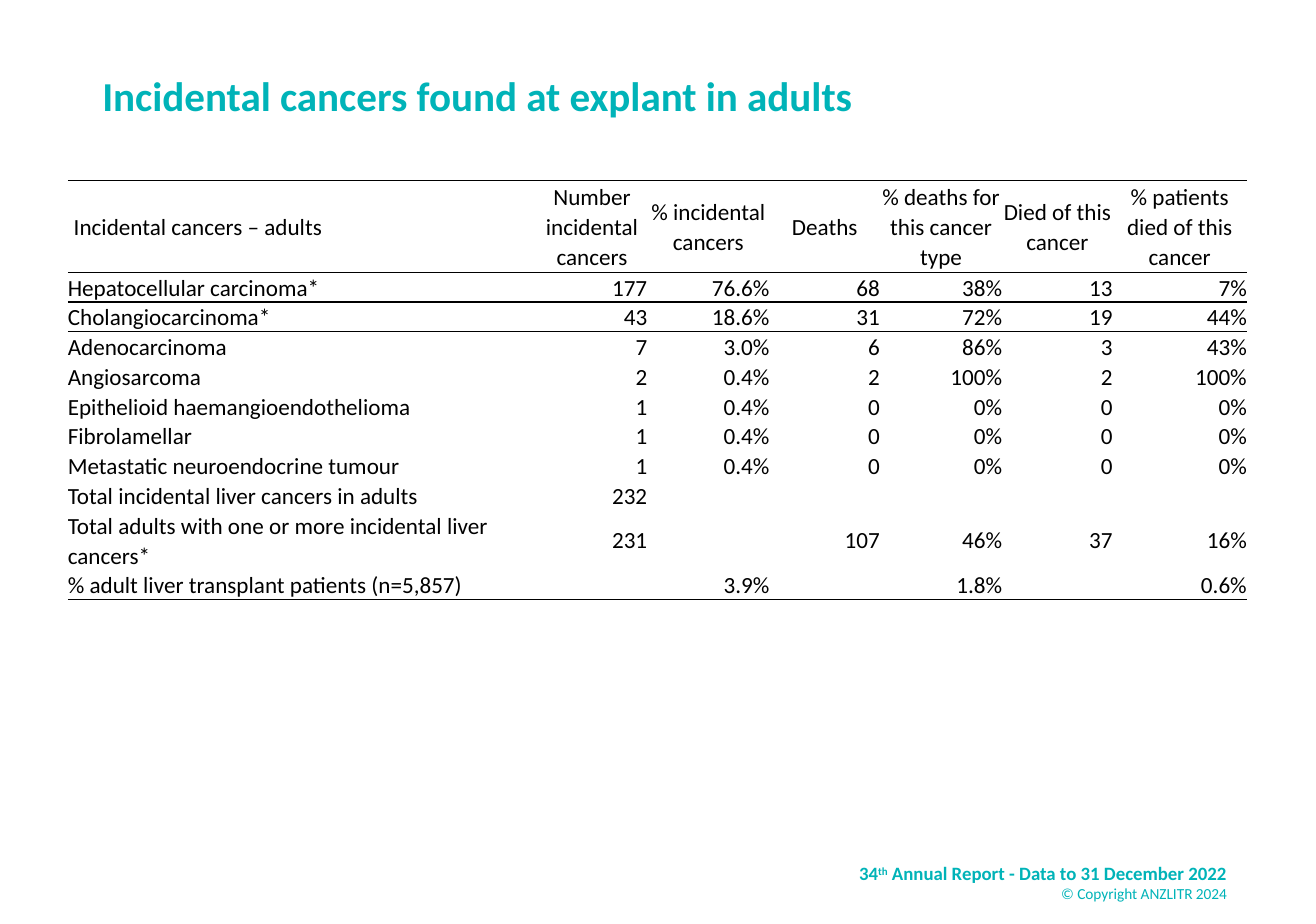
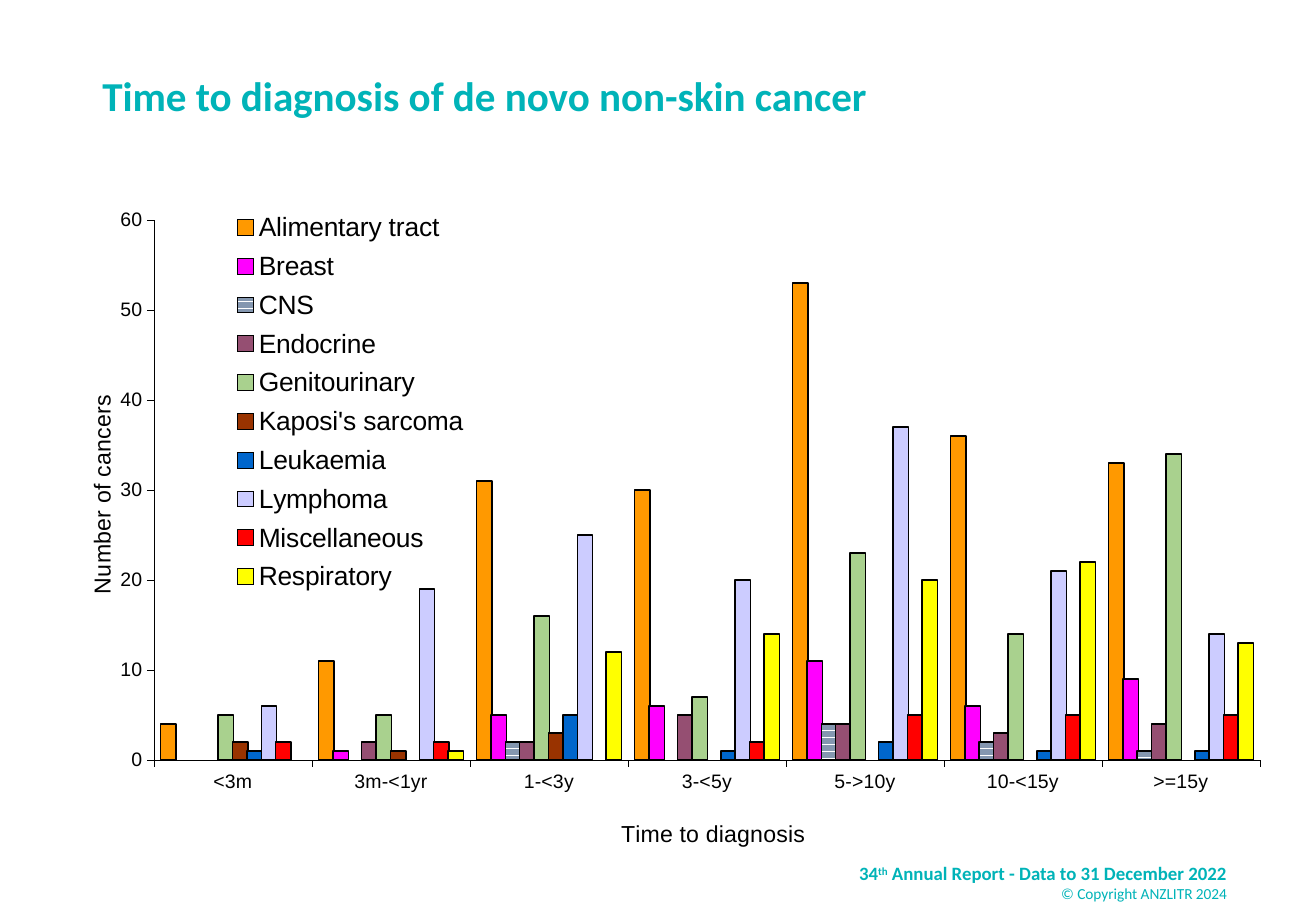
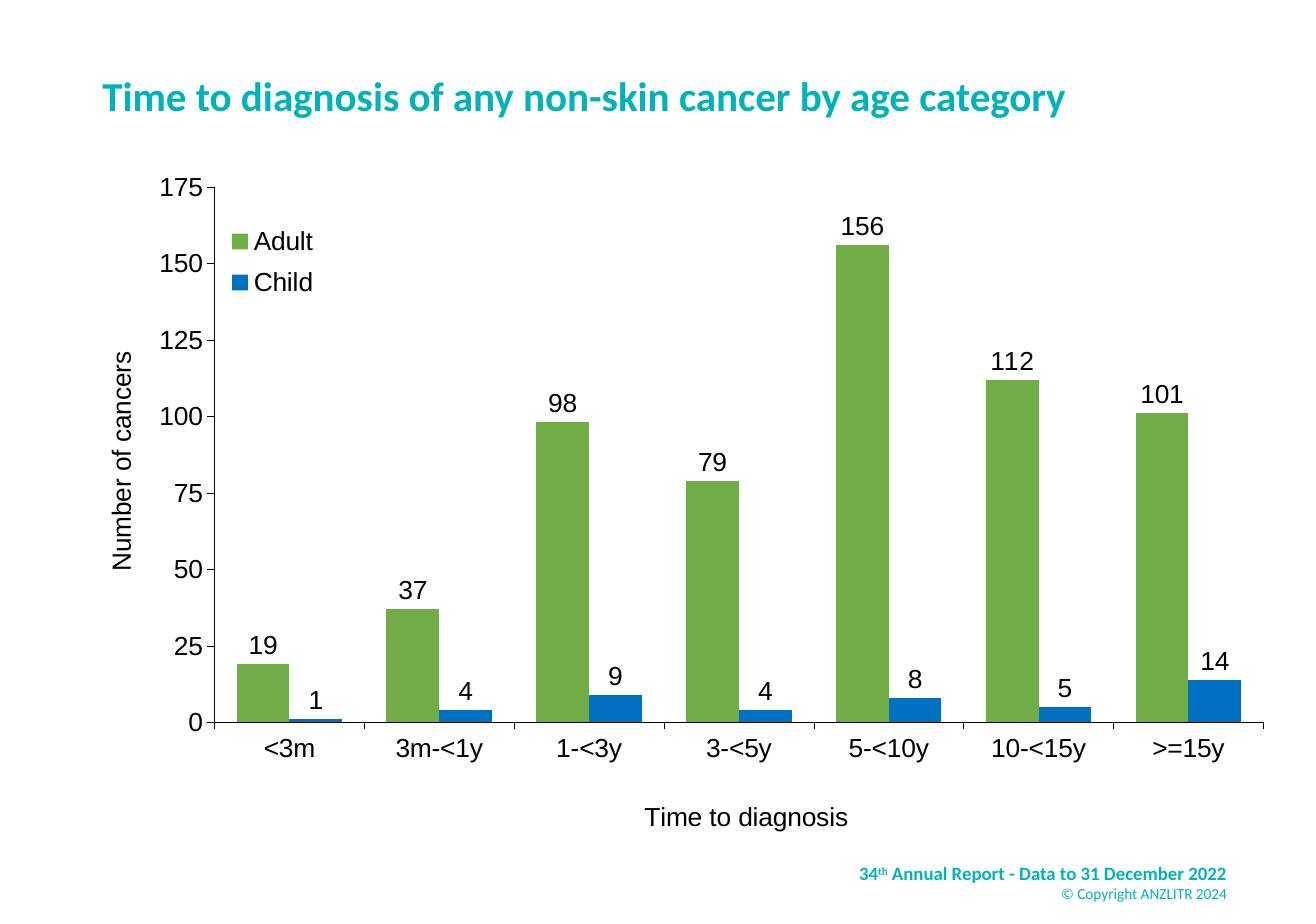
"""Build three slides on cancers in liver transplant patients."""
import pptx
import pptx.chart.data
import pptx.dml.color
import pptx.enum.chart
import pptx.enum.dml
import pptx.enum.text
import pptx.util
from lxml import etree
from pptx.oxml.ns import qn

SLIDE_WIDTH = pptx.util.Inches(11.07)
SLIDE_HEIGHT = pptx.util.Inches(7.77)
COLORS = {
    "brand": "00B3B8", "ink": "000000", "paper": "FFFFFF",
    "orange": "FF9900", "magenta": "FF00FF", "slate": "8497B0",
    "plum": "954F72", "sage": "A9D18E", "brown": "993300",
    "blue": "0066CC", "lavender": "CCCCFF", "red": "FF0000",
    "yellow": "FFFF00", "green": "70AD47", "azure": "0070C0",
}
TITLE_FORMAT = {"name": "Calibri", "size": pptx.util.Pt(24.9), "bold": True}
REPORT_FORMAT = {"name": "Calibri", "size": pptx.util.Pt(11.4), "bold": True}
COPYRIGHT_FORMAT = {"name": "Calibri", "size": pptx.util.Pt(9.3), "bold": False}
CELL_FORMAT = {"name": "Calibri", "size": pptx.util.Pt(14), "bold": False}
NO_STYLE = "{2D5ABB26-0587-4C30-8999-92F81FD0307C}"
ALIGN = pptx.enum.text.PP_ALIGN
MIDDLE = pptx.enum.text.MSO_ANCHOR.MIDDLE
LEGEND = pptx.enum.chart.XL_LEGEND_POSITION

COLUMN_WEIGHTS = [3.95, 0.93, 1.03, 0.93, 1.03, 0.93, 1.13]
ROW_WEIGHTS = [0.77] + [0.25] * 10
CANCER_ROWS = [
    ["Incidental cancers – adults", "Number incidental cancers", "% incidental cancers", "Deaths",
     "% deaths for this cancer type", "Died of this cancer", "% patients died of this cancer"],
    ["Hepatocellular carcinoma*", "177", "76.6%", "68", "38%", "13", "7%"],
    ["Cholangiocarcinoma*", "43", "18.6%", "31", "72%", "19", "44%"],
    ["Adenocarcinoma", "7", "3.0%", "6", "86%", "3", "43%"],
    ["Angiosarcoma", "2", "0.4%", "2", "100%", "2", "100%"],
    ["Epithelioid haemangioendothelioma", "1", "0.4%", "0", "0%", "0", "0%"],
    ["Fibrolamellar", "1", "0.4%", "0", "0%", "0", "0%"],
    ["Metastatic neuroendocrine tumour", "1", "0.4%", "0", "0%", "0", "0%"],
    ["Total incidental liver cancers in adults", "232", "", "", "", "", ""],
    ["Total adults with one or more incidental liver cancers*", "231", "", "107", "46%", "37", "16%"],
    ["% adult liver transplant patients (n=5,857)", "", "3.9%", "", "1.8%", "", "0.6%"],
]
ROW_BORDERS = {0: ["lnT", "lnB"], 1: ["lnT", "lnB"], 2: ["lnT"], 10: ["lnB"]}

DE_NOVO_CHART = {
    "area": (4.07, 21.24, 92.05, 71.94),
    "categories": ["<3m", "3m-<1yr", "1-<3y", "3-<5y", "5->10y", "10-<15y", ">=15y"],
    "series": [
        ("Alimentary tract", "orange", [4, 11, 31, 30, 53, 36, 33]),
        ("Breast", "magenta", [None, 1, 5, 6, 11, 6, 9]),
        ("CNS", "slate", [None, None, 2, None, 4, 2, 1]),
        ("Endocrine", "plum", [None, 2, 2, 5, 4, 3, 4]),
        ("Genitourinary", "sage", [5, 5, 16, 7, 23, 14, 34]),
        ("Kaposi's sarcoma", "brown", [2, 1, 3, None, None, None, None]),
        ("Leukaemia", "blue", [1, None, 5, 1, 2, 1, 1]),
        ("Lymphoma", "lavender", [6, 19, 25, 20, 37, 21, 14]),
        ("Miscellaneous", "red", [2, 2, None, 2, 5, 5, 5]),
        ("Respiratory", "yellow", [None, 1, 12, 14, 20, 22, 13]),
    ],
    "striped": "CNS", "outlined": True, "labelled": False, "overlap": 7,
    "maximum": 60, "step": 10, "tick_size": 11.8, "title_size": 14,
    "plot": (0.083, 0.036, 0.913, 0.812),
    "legend": (0.145, 0.01, 0.2, 0.6), "legend_side": LEGEND.LEFT,
    "category_title": (0.465, 0.93), "value_title": (0.024, 0.293),
}
AGE_CHART = {
    "area": (3.97, 17.63, 92.05, 73.23),
    "categories": ["<3m", "3m-<1y", "1-<3y", "3-<5y", "5-<10y", "10-<15y", ">=15y"],
    "series": [
        ("Adult", "green", [19, 37, 98, 79, 156, 112, 101]),
        ("Child", "azure", [1, 4, 9, 4, 8, 5, 14]),
    ],
    "striped": None, "outlined": False, "labelled": True, "overlap": 0,
    "maximum": 175, "step": 25, "tick_size": 16, "title_size": 16,
    "plot": (0.134, 0.036, 0.866, 0.799),
    "legend": (0.142, 0.077, 0.08, 0.142), "legend_side": LEGEND.TOP,
    "category_title": (0.485, 0.944), "value_title": (0.039, 0.278),
}


def color(name):
    """Return the named colour."""
    return pptx.dml.color.RGBColor.from_string(COLORS[name])


def area(left, top, width, height):
    """Turn percentages of the slide into lengths."""
    return [int(share * full / 100) for share, full in
            zip((left, top, width, height), (SLIDE_WIDTH, SLIDE_HEIGHT) * 2)]


def set_values(target, values):
    """Set each attribute in the dict on the target."""
    for name, value in values.items():
        setattr(target, name, value)


def set_font(font, values, color_name="ink"):
    """Format a font and colour it."""
    set_values(font, values)
    font.color.rgb = color(color_name)


def chart_font(size):
    """Return the font values of a chart text."""
    return {"name": "Arial", "size": pptx.util.Pt(size), "bold": False}


def add_run(paragraph, text, values, color_name):
    """Add a formatted run."""
    run = paragraph.add_run()
    run.text = text
    set_font(run.font, values, color_name)
    return run


def add_footer(slide):
    """Add the report name and copyright line."""
    frame = slide.shapes.add_textbox(*area(60.43, 92.66, 33.69, 5.28)).text_frame
    frame.word_wrap = True
    report, copyright_line = frame.paragraphs[0], frame.add_paragraph()
    report.alignment = copyright_line.alignment = ALIGN.RIGHT
    add_run(report, "34", REPORT_FORMAT, "brand")
    ordinal = add_run(report, "th", REPORT_FORMAT, "brand")
    ordinal.font._element.set("baseline", "30000")
    add_run(report, " Annual Report - Data to 31 December 2022", REPORT_FORMAT, "brand")
    add_run(copyright_line, "© Copyright ANZLITR 2024", COPYRIGHT_FORMAT, "brand")


def add_slide(presentation, title_text):
    """Add a slide with its title and footer."""
    slide = presentation.slides.add_slide(presentation.slide_layouts[5])
    title = slide.shapes.title
    set_values(title, dict(zip(("left", "top", "width", "height"), area(6.87, 3.6, 86.18, 14.03))))
    set_values(title.text_frame, {"vertical_anchor": MIDDLE, "word_wrap": True,
                                  "auto_size": pptx.enum.text.MSO_AUTO_SIZE.NONE})
    paragraph = title.text_frame.paragraphs[0]
    set_values(paragraph, {"alignment": ALIGN.LEFT, "line_spacing": 0.9})
    add_run(paragraph, title_text, TITLE_FORMAT, "brand")
    add_footer(slide)
    return slide


def add_border(cell, side):
    """Draw one side of a cell."""
    line = etree.SubElement(cell._tc.get_or_add_tcPr(), qn("a:" + side), w=str(pptx.util.Pt(1)))
    fill = etree.SubElement(line, qn("a:solidFill"))
    etree.SubElement(fill, qn("a:srgbClr"), val=COLORS["ink"])


def fill_cell(cell, text, row, column):
    """Write and format one table cell."""
    set_values(cell, {"margin_left": 0, "margin_right": 0, "margin_top": 0,
                      "margin_bottom": 0, "vertical_anchor": MIDDLE})
    if row == column == 0:
        cell.margin_left = pptx.util.Inches(0.05)
    for side in ROW_BORDERS.get(row, []):
        add_border(cell, side)
    cell.fill.background()
    paragraph = cell.text_frame.paragraphs[0]
    paragraph.line_spacing = 1.07
    paragraph.alignment = ALIGN.LEFT if column == 0 else ALIGN.CENTER if row == 0 else ALIGN.RIGHT
    if text:
        add_run(paragraph, text, CELL_FORMAT, "ink")
    else:
        etree.SubElement(paragraph._p, qn("a:endParaRPr"), sz="1400")


def add_cancer_table(slide):
    """Add the table of incidental cancers."""
    left, top, width, height = area(5.15, 19.56, 89.61, 42.08)
    frame = slide.shapes.add_table(len(ROW_WEIGHTS), len(COLUMN_WEIGHTS), left, top, width, height)
    table = frame.table
    set_values(table, {"first_row": False, "horz_banding": False})
    table._tbl.tblPr.find(qn("a:tableStyleId")).text = NO_STYLE
    for column, weight in zip(table.columns, COLUMN_WEIGHTS):
        column.width = int(width * weight / sum(COLUMN_WEIGHTS))
    for row, weight in zip(table.rows, ROW_WEIGHTS):
        row.height = int(height * weight / sum(ROW_WEIGHTS))
    for row, texts in enumerate(CANCER_ROWS):
        for column, text in enumerate(texts):
            fill_cell(table.cell(row, column), text, row, column)


def set_layout(element, index, shares, inner=False):
    """Place a chart part by shares of the chart."""
    for layout in element.findall(qn("c:layout")):
        element.remove(layout)
    layout = etree.Element(qn("c:layout"))
    element.insert(index, layout)
    manual = etree.SubElement(layout, qn("c:manualLayout"))
    values = [("layoutTarget", "inner")] if inner else []
    values += [("xMode", "edge"), ("yMode", "edge")] + list(zip("xywh", shares))
    for name, value in values:
        etree.SubElement(manual, qn("c:" + name), val=str(value))


def format_axis(axis, text, place, settings):
    """Format an axis and its title."""
    set_values(axis, {"has_major_gridlines": False,
                      "major_tick_mark": pptx.enum.chart.XL_TICK_MARK.OUTSIDE,
                      "minor_tick_mark": pptx.enum.chart.XL_TICK_MARK.NONE})
    set_font(axis.tick_labels.font, chart_font(settings["tick_size"]))
    axis.format.line.color.rgb = color("ink")
    axis.format.line.width = pptx.util.Pt(0.22)
    title = axis.axis_title
    add_run(title.text_frame.paragraphs[0], text, chart_font(settings["title_size"]), "ink")
    set_layout(title._element, 1, place)


def format_series(series, color_name, settings):
    """Colour, outline and label one series."""
    series.invert_if_negative = False
    fill = series.format.fill
    if series.name == settings["striped"]:
        fill.patterned()
        fill.pattern = pptx.enum.dml.MSO_PATTERN.DARK_HORIZONTAL
        fill.fore_color.rgb = color(color_name)
        fill.back_color.rgb = color("paper")
    else:
        fill.solid()
        fill.fore_color.rgb = color(color_name)
    if settings["outlined"]:
        series.format.line.color.rgb = color("ink")
        series.format.line.width = pptx.util.Pt(0.87)
    if settings["labelled"]:
        labels = series.data_labels
        set_values(labels, {"show_value": True, "number_format": "0",
                            "number_format_is_linked": False,
                            "position": pptx.enum.chart.XL_LABEL_POSITION.OUTSIDE_END})
        set_font(labels.font, chart_font(16))


def add_column_chart(slide, settings):
    """Add a clustered column chart."""
    data = pptx.chart.data.CategoryChartData(number_format="0")
    data.categories = settings["categories"]
    for name, _, values in settings["series"]:
        data.add_series(name, values)
    kind = pptx.enum.chart.XL_CHART_TYPE.COLUMN_CLUSTERED
    chart = slide.shapes.add_chart(kind, *area(*settings["area"]), data).chart
    set_values(chart, {"has_title": False, "has_legend": True})
    set_font(chart.font, chart_font(16))
    plot = chart.plots[0]
    set_values(plot, {"gap_width": 84, "overlap": settings["overlap"], "vary_by_categories": False})
    for series, (_, color_name, _) in zip(plot.series, settings["series"]):
        format_series(series, color_name, settings)
    format_axis(chart.category_axis, "Time to diagnosis", settings["category_title"], settings)
    value_axis = chart.value_axis
    format_axis(value_axis, "Number of cancers", settings["value_title"], settings)
    set_values(value_axis, {"minimum_scale": 0, "maximum_scale": settings["maximum"],
                            "major_unit": settings["step"]})
    set_values(value_axis.tick_labels, {"number_format": "0", "number_format_is_linked": False})
    value_axis.axis_title.text_frame._txBody.bodyPr.set("rot", "-5400000")
    set_values(chart.legend, {"position": settings["legend_side"], "include_in_layout": False})
    set_font(chart.legend.font, chart_font(16))
    set_layout(chart.legend._element, 1, settings["legend"])
    set_layout(chart._chartSpace.chart.plotArea, 0, settings["plot"], inner=True)


def main():
    """Build and save the presentation."""
    presentation = pptx.Presentation()
    set_values(presentation, {"slide_width": SLIDE_WIDTH, "slide_height": SLIDE_HEIGHT})
    add_cancer_table(add_slide(presentation, "Incidental cancers found at explant in adults"))
    add_column_chart(add_slide(presentation, "Time to diagnosis of de novo non-skin cancer"), DE_NOVO_CHART)
    add_column_chart(add_slide(presentation, "Time to diagnosis of any non-skin cancer by age category"), AGE_CHART)
    presentation.save("out.pptx")


if __name__ == "__main__":
    main()
